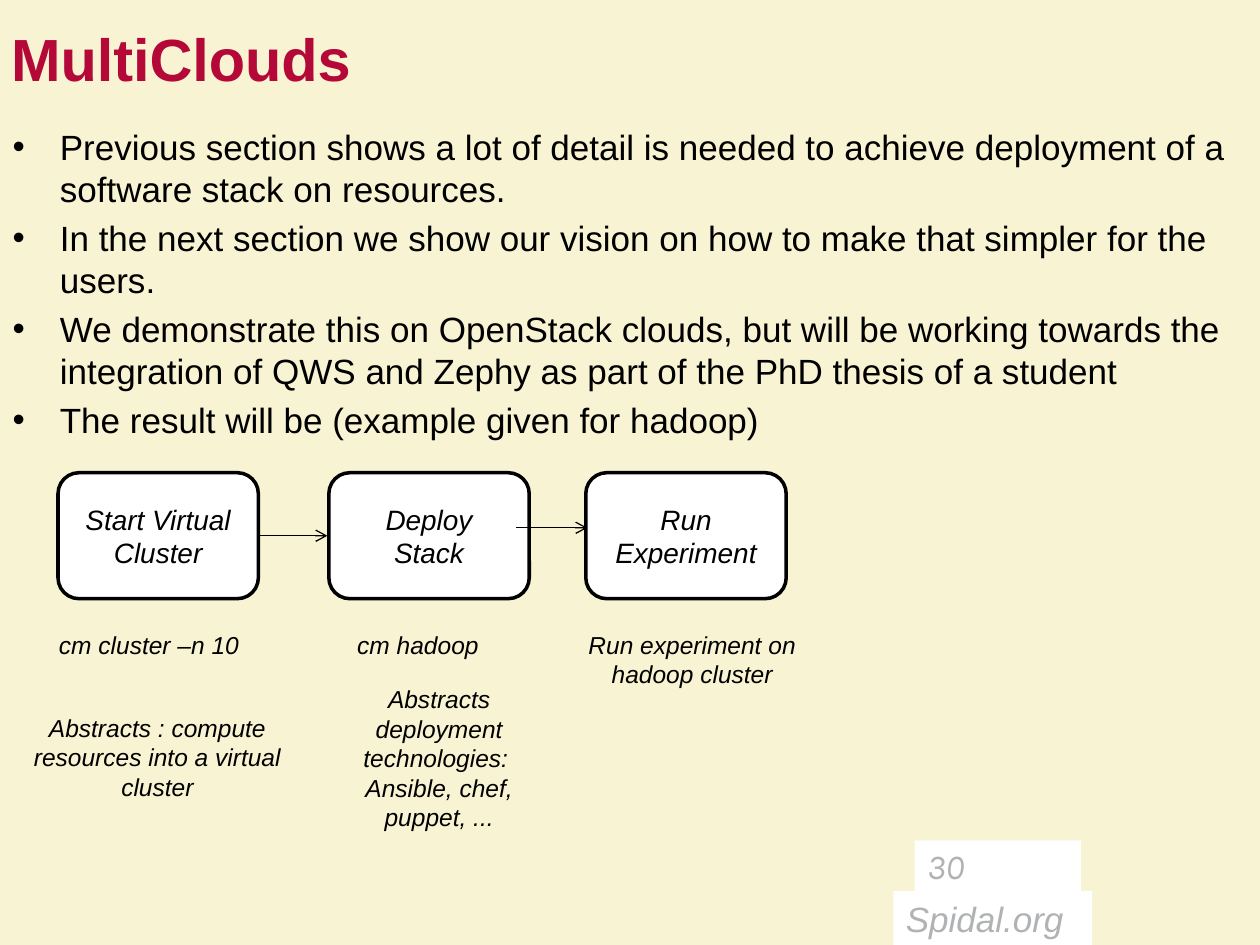
from lxml import etree
from pptx import Presentation
from pptx.dml.color import RGBColor
from pptx.enum.shapes import MSO_CONNECTOR, MSO_SHAPE
from pptx.enum.text import MSO_ANCHOR, MSO_AUTO_SIZE, PP_ALIGN
from pptx.oxml.ns import qn
from pptx.util import Cm, Pt

RECT, ROUND = MSO_SHAPE.RECTANGLE, MSO_SHAPE.ROUNDED_RECTANGLE
STRAIGHT = MSO_CONNECTOR.STRAIGHT
TOP, MIDDLE = MSO_ANCHOR.TOP, MSO_ANCHOR.MIDDLE
LEFT, CENTER = PP_ALIGN.LEFT, PP_ALIGN.CENTER
NO_FIT = MSO_AUTO_SIZE.NONE

COLORS = {
    "paper": "F8F3D2",
    "white": "FFFFFF",
    "text": "000000",
    "muted": "B0B2B4",
    "title": "B30838",
}
BULLETS = [
    "Previous section shows a lot of detail is needed to achieve deployment of a software stack on resources.",
    "In the next section we show our vision on how to make that simpler for the users.",
    "We demonstrate this on OpenStack clouds, but will be working towards the integration of QWS and Zephy as part of the PhD thesis of a student",
    "The result will be (example given for hadoop)",
]
STEPS = [
    (1.17, ["Start Virtual Cluster"]),
    (6.63, ["Deploy", "Stack"]),
    (11.81, ["Run Experiment"]),
]
ARROWS = [(5.18, 6.6, 10.8), (10.41, 11.84, 10.64)]
NOTES = [
    (0.58, 12.57, 4.85, 0.86, ["cm cluster –n 10"]),
    (6.07, 12.57, 4.85, 0.86, ["cm hadoop "]),
    (11.53, 12.57, 4.85, 1.45, ["Run experiment on hadoop cluster"]),
    (0.38, 14.25, 5.59, 2.06, ["Abstracts : compute resources into a virtual cluster"]),
    (6.43, 13.67, 4.85, 3.25, ["Abstracts deployment technologies: ", "Ansible, chef, puppet, ..."]),
]


def rgb(name):
    return RGBColor.from_string(COLORS[name])


def write(sp, lines, size, color="text", font="Arial", bold=False, italic=False,
          align=LEFT, anchor=TOP):
    tf = sp.text_frame
    tf.word_wrap = True
    tf.auto_size = NO_FIT
    tf.vertical_anchor = anchor
    for i, line in enumerate(lines):
        p = tf.paragraphs[0] if i == 0 else tf.add_paragraph()
        p.alignment = align
        p.line_spacing = Pt(round(size * 1.2, 1))
        if i == 0:
            p.space_before = Pt(0)
        r = p.add_run()
        r.text = line
        r.font.name = font
        r.font.size = Pt(size)
        r.font.bold = bold
        r.font.italic = italic
        r.font.color.rgb = rgb(color)


def place(sp, x, y, w, h):
    sp.left, sp.top, sp.width, sp.height = Cm(x), Cm(y), Cm(w), Cm(h)


def add_box(s, kind, x, y, w, h, lines, size, outlined=False, **fmt):
    sp = s.shapes.add_shape(kind, Cm(x), Cm(y), Cm(w), Cm(h))
    sp.shadow.inherit = False
    sp.fill.solid()
    sp.fill.fore_color.rgb = rgb("white")
    if outlined:
        sp.line.color.rgb = rgb("text")
        sp.line.width = Pt(2)
    else:
        sp.line.fill.background()
    write(sp, lines, size, italic=True, **fmt)


def add_note(s, x, y, w, h, lines):
    sp = s.shapes.add_textbox(Cm(x), Cm(y), Cm(w), Cm(h))
    write(sp, lines, 14, italic=True, align=CENTER)


def add_arrow(s, x1, x2, y):
    sp = s.shapes.add_connector(STRAIGHT, Cm(x1), Cm(y), Cm(x2), Cm(y))
    sp.line.color.rgb = rgb("text")
    sp.line.width = Pt(0.75)
    etree.SubElement(sp.line._get_or_add_ln(), qn("a:tailEnd"), type="arrow")
    etree.SubElement(sp._element.spPr, qn("a:effectLst"))


def main():
    prs = Presentation()
    prs.slide_width, prs.slide_height = Cm(25.4), Cm(19.05)
    s = prs.slides.add_slide(prs.slide_layouts[1])
    s.background.fill.solid()
    s.background.fill.fore_color.rgb = rgb("paper")

    add_box(s, RECT, 18.44, 16.94, 3.35, 1.02, ["30"], 20,
            color="muted", font="Karla", anchor=MIDDLE)
    add_box(s, RECT, 18.01, 17.96, 4.01, 1.12, ["Spidal.org"], 20, color="muted")

    title, body = s.placeholders
    place(title, -0.03, 0, 25.35, 2.34)
    write(title, ["MultiClouds"], 34, color="title", bold=True, anchor=MIDDLE)
    place(body, 0, 2.41, 25.2, 14.33)
    write(body, BULLETS, 20)

    for x, lines in STEPS:
        add_box(s, ROUND, x, 9.53, 4.04, 2.54, lines, 16, outlined=True,
                align=CENTER, anchor=MIDDLE)
    for arrow in ARROWS:
        add_arrow(s, *arrow)
    for note in NOTES:
        add_note(s, *note)

    prs.save("out.pptx")


if __name__ == "__main__":
    main()
